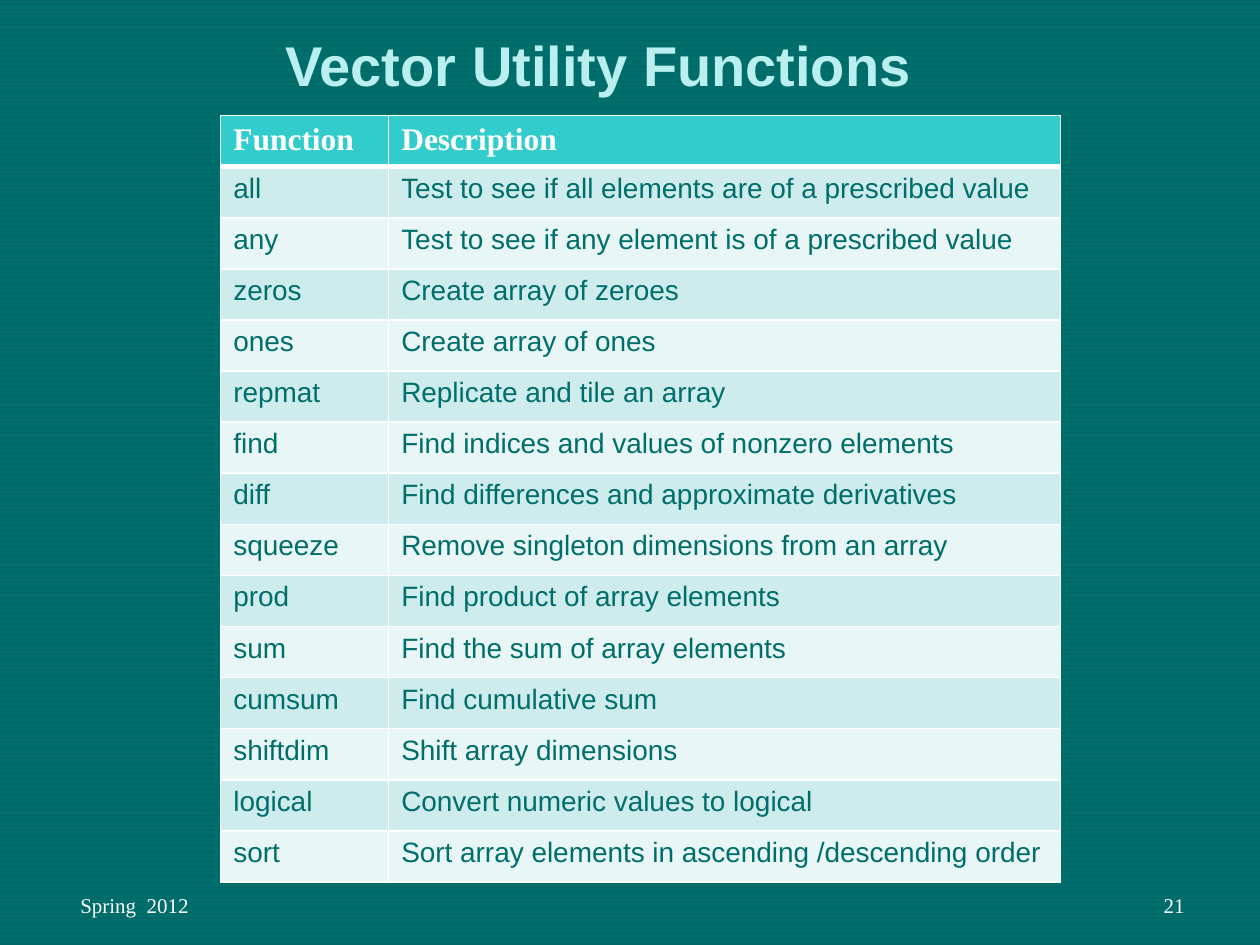
from pptx import Presentation
from pptx.dml.color import RGBColor
from pptx.enum.dml import MSO_PATTERN
from pptx.enum.text import MSO_ANCHOR, MSO_AUTO_SIZE, PP_ALIGN
from pptx.oxml import parse_xml
from pptx.oxml.ns import nsdecls
from pptx.util import Cm, Pt

STRIPES = MSO_PATTERN.DARK_HORIZONTAL
TOP, BOTTOM = MSO_ANCHOR.TOP, MSO_ANCHOR.BOTTOM
FIT_SHAPE = MSO_AUTO_SIZE.SHAPE_TO_FIT_TEXT
LEFT, RIGHT = PP_ALIGN.LEFT, PP_ALIGN.RIGHT

TEAL, WHITE = "006E6B", "FFFFFF"
HEADER_FILL = "33CCCC"
BAND_FILLS = ("CEECEC", "E8F6F6")

TITLE_FONT = {"name": "Arial", "size": Pt(32), "bold": True, "color": "B9EFEE"}
HEADER_FONT = {"name": "Times New Roman", "size": Pt(18), "bold": True, "color": WHITE}
BODY_FONT = {"name": "Arial", "size": Pt(16), "bold": False, "color": TEAL}
FOOTER_FONT = {"name": "Times New Roman", "size": Pt(12), "color": WHITE}

FUNCTIONS = [
    ("Function", "Description"),
    ("all", "Test to see if all elements are of a prescribed value"),
    ("any", "Test to see if any element is of a prescribed value"),
    ("zeros", "Create array of zeroes"),
    ("ones", "Create array of ones"),
    ("repmat", "Replicate and tile an array"),
    ("find", "Find indices and values of nonzero elements"),
    ("diff", "Find differences and approximate derivatives"),
    ("squeeze", "Remove singleton dimensions from an array"),
    ("prod", "Find product of array elements"),
    ("sum", "Find the sum of array elements"),
    ("cumsum", "Find cumulative sum"),
    ("shiftdim", "Shift array dimensions"),
    ("logical", "Convert numeric values to logical"),
    ("sort", "Sort array elements in ascending /descending order"),
]


def rgb(hex_color):
    return RGBColor.from_string(hex_color)


def write(text_frame, text, font, align=LEFT):
    text_frame.text = text
    paragraph = text_frame.paragraphs[0]
    paragraph.alignment = align
    for key, value in font.items():
        if key == "color":
            paragraph.font.color.rgb = rgb(value)
        else:
            setattr(paragraph.font, key, value)


def paint_background(slide):
    fill = slide.background.fill
    fill.patterned()
    fill.pattern = STRIPES
    fill.fore_color.rgb = rgb(TEAL)
    fill.back_color.rgb = rgb("006666")


def place_title(slide, left, top, width, height):
    title = slide.shapes.title
    title.left, title.top, title.width, title.height = left, top, width, height
    frame = title.text_frame
    write(frame, "Vector Utility Functions", TITLE_FONT)
    frame.vertical_anchor = TOP
    frame.word_wrap = True
    frame.auto_size = FIT_SHAPE


def set_borders(cell, widths):
    """Draw white cell edges; widths are points for left, right, top, bottom."""
    properties = cell._tc.get_or_add_tcPr()
    for index, (side, width) in enumerate(zip("LRTB", widths)):
        properties.insert(index, parse_xml(
            f'<a:ln{side} {nsdecls("a")} w="{Pt(width)}"><a:solidFill>'
            f'<a:srgbClr val="{WHITE}"/></a:solidFill></a:ln{side}>'))


def add_function_table(slide, left, top, width, height):
    table = slide.shapes.add_table(
        len(FUNCTIONS), 2, left, top, width, height).table
    table.columns[0].width = width // 5
    table.columns[1].width = width - width // 5
    for row_index, texts in enumerate(FUNCTIONS):
        is_header = row_index == 0
        fill = HEADER_FILL if is_header else BAND_FILLS[(row_index - 1) % 2]
        top_line = 3 if row_index == 1 else 1
        bottom_line = 3 if is_header else 1
        for column_index, text in enumerate(texts):
            cell = table.cell(row_index, column_index)
            write(cell.text_frame, text, HEADER_FONT if is_header else BODY_FONT)
            cell.fill.solid()
            cell.fill.fore_color.rgb = rgb(fill)
            set_borders(cell, (1, 1, top_line, bottom_line))


def add_footer(slide, left, top, width, height):
    """Put the term at the left end and the slide number at the right end."""
    part_width = Cm(5.92)
    parts = [("Spring  2012", left, LEFT),
             ("21", left + width - part_width, RIGHT)]
    for text, part_left, align in parts:
        frame = slide.shapes.add_textbox(
            part_left, top, part_width, height).text_frame
        frame.word_wrap = True
        frame.vertical_anchor = BOTTOM
        write(frame, text, FOOTER_FONT, align)


def main():
    presentation = Presentation()
    presentation.slide_width, presentation.slide_height = Cm(25.4), Cm(19.05)
    slide = presentation.slides.add_slide(presentation.slide_layouts[5])
    paint_background(slide)
    add_footer(slide, Cm(1.37), Cm(17.35), Cm(22.76), Cm(1.27))
    place_title(slide, Cm(5.5), Cm(0.48), Cm(13.77), Cm(1.63))
    add_function_table(slide, Cm(4.45), Cm(2.33), Cm(16.93), Cm(15.45))
    presentation.save("out.pptx")


if __name__ == "__main__":
    main()
